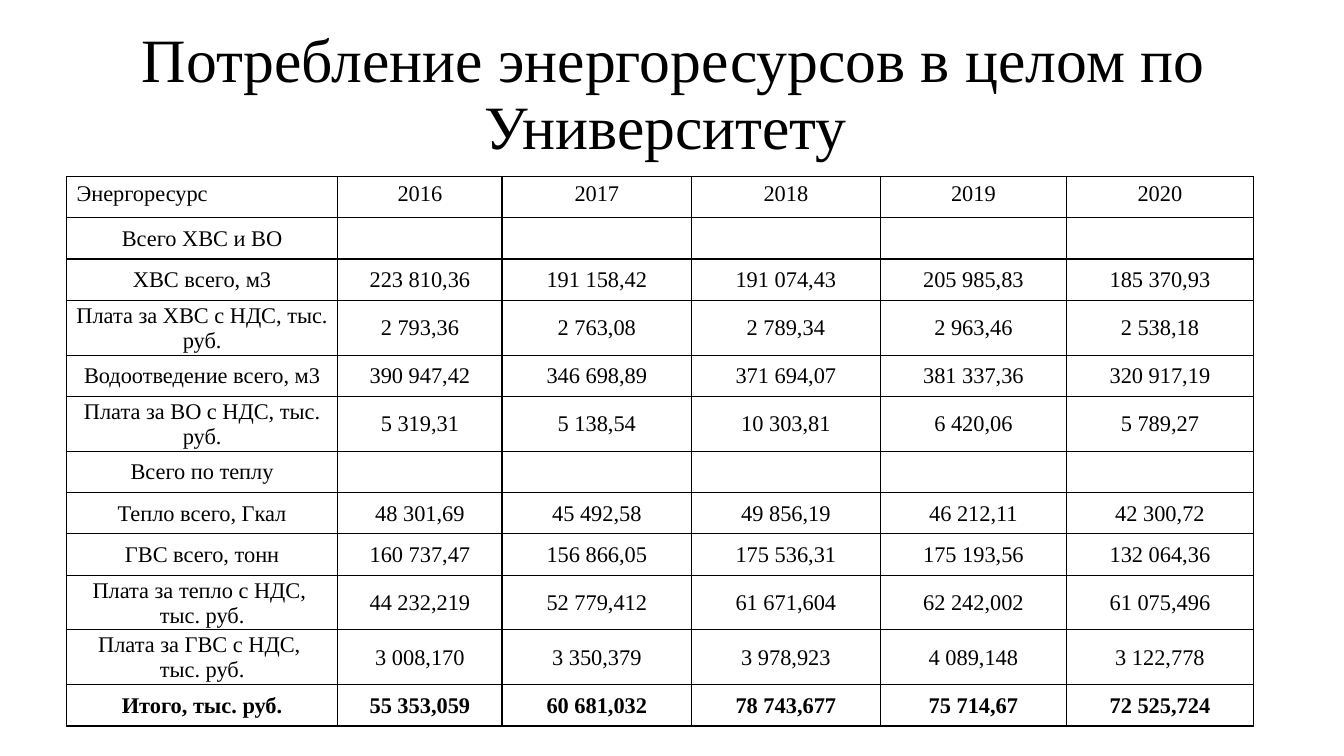
from lxml.etree import SubElement
from pptx import Presentation
from pptx.dml.color import RGBColor
from pptx.enum.text import MSO_ANCHOR as Anchor, PP_ALIGN as Align
from pptx.oxml.ns import qn
from pptx.util import Inches, Pt

COLORS = {"ink": "000000", "grid": "000000"}
FONT = "Times New Roman"
TITLE = "Потребление энергоресурсов в целом по Университету "
COLUMN_WIDTHS = [2.69, 1.63, 1.88, 1.87, 1.85, 1.85]
ROW_HEIGHT = 0.41
CONSUMPTION = [
    ["Энергоресурс", "2016", "2017", "2018", "2019", "2020"],
    ["Всего ХВС и ВО"],
    ["ХВС всего, м3", "223 810,36", "191 158,42", "191 074,43", "205 985,83", "185 370,93"],
    ["Плата за ХВС с НДС, тыс. руб.", "2 793,36", "2 763,08", "2 789,34", "2 963,46", "2 538,18"],
    ["Водоотведение всего, м3", "390 947,42", "346 698,89", "371 694,07", "381 337,36", "320 917,19"],
    ["Плата за ВО с НДС, тыс. руб.", "5 319,31", "5 138,54", "10 303,81", "6 420,06", "5 789,27"],
    ["Всего по теплу"],
    ["Тепло всего, Гкал", "48 301,69", "45 492,58", "49 856,19", "46 212,11", "42 300,72"],
    ["ГВС всего, тонн", "160 737,47", "156 866,05", "175 536,31", "175 193,56", "132 064,36"],
    ["Плата за тепло с НДС, \nтыс. руб.", "44 232,219", "52 779,412", "61 671,604", "62 242,002", "61 075,496"],
    ["Плата за ГВС с НДС, \nтыс. руб.", "3 008,170", "3 350,379", "3 978,923", "4 089,148", "3 122,778"],
    ["Итого, тыс. руб.", "55 353,059", "60 681,032", "78 743,677", "75 714,67", "72 525,724"],
]


def write_text(frame, text, size, align=Align.CENTER, bold=False):
    frame.text = text
    for paragraph in frame.paragraphs:
        paragraph.alignment = align
        for run in paragraph.runs:
            run.font.name = FONT
            run.font.size = Pt(size)
            run.font.bold = bold
            run.font.color.rgb = RGBColor.from_string(COLORS["ink"])


def add_title(slide):
    title = slide.shapes.add_textbox(Inches(0.93), Inches(0.23), Inches(11.5), Inches(1.45))
    frame = title.text_frame
    frame.word_wrap = True
    frame.vertical_anchor = Anchor.MIDDLE
    write_text(frame, TITLE, 44)
    frame.paragraphs[0].line_spacing = 0.9


def draw_borders(cell):
    properties = cell._tc.get_or_add_tcPr()
    for side in ("a:lnL", "a:lnR", "a:lnT", "a:lnB"):
        border = SubElement(properties, qn(side), w=str(Pt(1)))
        fill = SubElement(border, qn("a:solidFill"))
        SubElement(fill, qn("a:srgbClr"), val=COLORS["grid"])


def tighten(cell):
    cell.vertical_anchor = Anchor.MIDDLE
    cell.margin_left = cell.margin_right = cell.margin_top = Inches(0.01)
    cell.margin_bottom = 0


def add_consumption_table(slide):
    row_count = len(CONSUMPTION)
    table = slide.shapes.add_table(
        row_count, len(COLUMN_WIDTHS), Inches(0.66), Inches(1.75),
        Inches(sum(COLUMN_WIDTHS)), Inches(ROW_HEIGHT * row_count)).table
    table.first_row = table.horz_banding = False
    for column, width in zip(table.columns, COLUMN_WIDTHS):
        column.width = Inches(width)
    for row_index, values in enumerate(CONSUMPTION):
        table.rows[row_index].height = Inches(ROW_HEIGHT)
        is_header = row_index == 0
        is_total = row_index == row_count - 1
        for column_index, cell in enumerate(table.rows[row_index].cells):
            draw_borders(cell)
            cell.fill.background()
            if column_index >= len(values):
                continue
            if not is_header:
                tighten(cell)
            is_corner = is_header and column_index == 0
            align = Align.LEFT if is_corner else Align.CENTER
            write_text(cell.text_frame, values[column_index], 16, align, is_total)


def main():
    deck = Presentation()
    deck.slide_width, deck.slide_height = Inches(13.33), Inches(7.5)
    slide = deck.slides.add_slide(deck.slide_layouts[6])
    add_title(slide)
    add_consumption_table(slide)
    deck.save("out.pptx")


if __name__ == "__main__":
    main()
